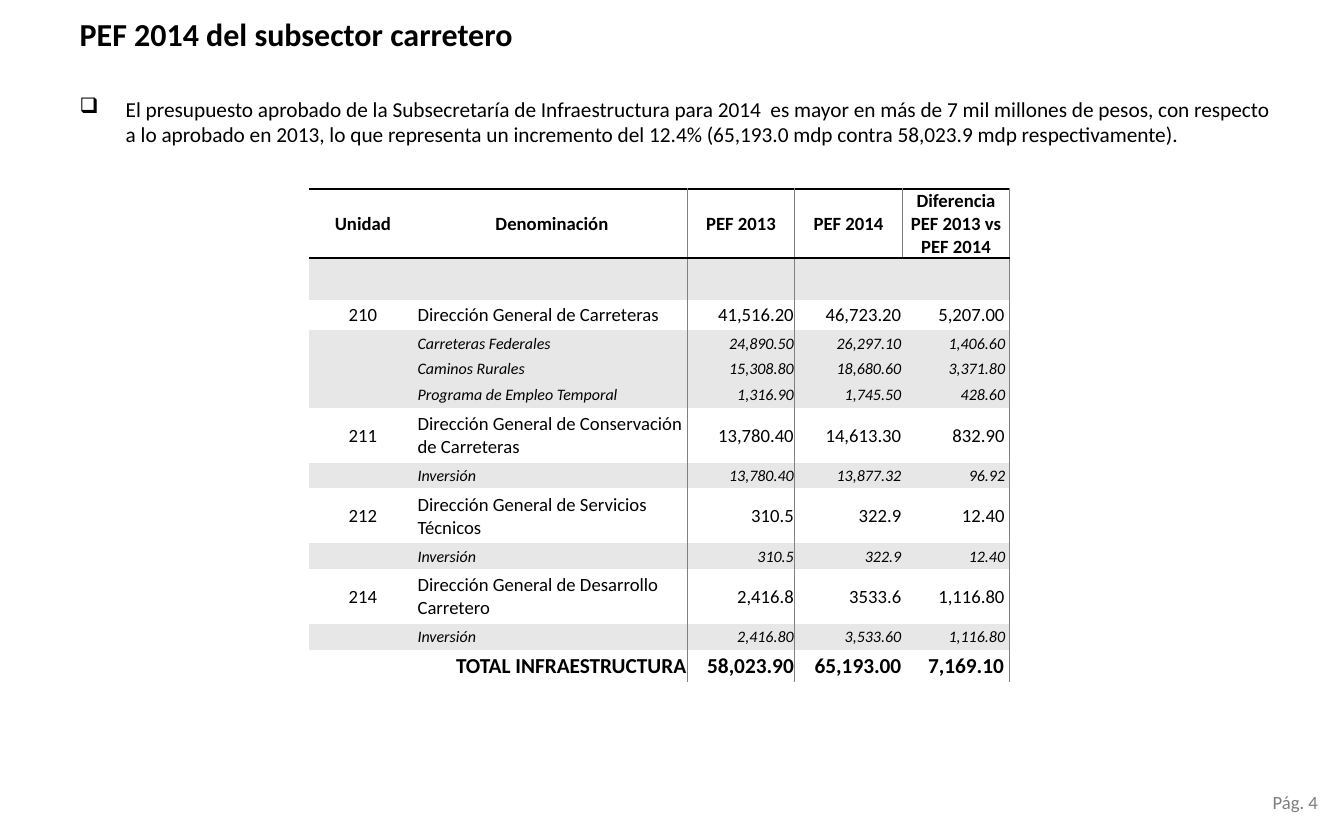
from lxml import etree
from pptx import Presentation
from pptx.dml.color import RGBColor
from pptx.enum import text as t
from pptx.oxml.ns import qn
from pptx.util import Inches, Pt

TITLE = "PEF 2014 del subsector carretero"
SUMMARY = (
    "El presupuesto aprobado de la Subsecretaría de Infraestructura para 2014  es mayor en más "
    "de 7 mil millones de pesos, con respecto a lo aprobado en 2013, lo que representa un "
    "incremento del 12.4% (65,193.0 mdp contra 58,023.9 mdp respectivamente)."
)
PAGE = "Pág. 4"
ROWS = [
    ("header", 0.61, ["Unidad", "Denominación", "PEF 2013", "PEF 2014", "Diferencia\nPEF 2013 vs PEF 2014"]),
    ("detail", 0.43, ["", "", "", "", ""]),
    ("unit", 0.32, ["210", "Dirección General de Carreteras", "41,516.20", "46,723.20", "5,207.00 "]),
    ("detail", 0.27, ["", "Carreteras Federales", "24,890.50", "26,297.10", "1,406.60 "]),
    ("detail", 0.27, ["", "Caminos Rurales", "15,308.80", "18,680.60", "3,371.80 "]),
    ("detail", 0.27, ["", "Programa de Empleo Temporal", "1,316.90", "1,745.50", "428.60 "]),
    ("unit", 0.57, ["211", "Dirección General de Conservación de Carreteras", "13,780.40", "14,613.30", "832.90 "]),
    ("detail", 0.27, ["", "Inversión", "13,780.40", "13,877.32", "96.92 "]),
    ("unit", 0.57, ["212", "Dirección General de Servicios Técnicos", "310.5", "322.9", "12.40 "]),
    ("detail", 0.27, ["", "Inversión", "310.5", "322.9", "12.40 "]),
    ("unit", 0.57, ["214", "Dirección General de Desarrollo Carretero", "2,416.8", "3533.6", "1,116.80 "]),
    ("detail", 0.27, ["", "Inversión", "2,416.80", "3,533.60", "1,116.80 "]),
    ("total", 0.34, ["TOTAL INFRAESTRUCTURA", "", "58,023.90", "65,193.00", "7,169.10 "]),
    ("closing", 0.29, ["", "", "", "", ""]),
]
COLUMNS = [1.12, 2.82, 1.12, 1.12, 1.12]
COLORS = {"text": "000000", "page": "7F7F7F", "band": "E7E7E7", "rule": "808080"}
FORMATS = {
    "header": {"size": 14, "bold": True},
    "unit": {"size": 14},
    "detail": {"size": 12, "italic": True},
    "total": {"size": 16, "bold": True},
    "closing": {"size": 12},
}
LEFT, CENTER, RIGHT = t.PP_ALIGN.LEFT, t.PP_ALIGN.CENTER, t.PP_ALIGN.RIGHT
ALIGNMENTS = [CENTER, LEFT, RIGHT, RIGHT, RIGHT]
NO_STYLE = "{2D5ABB26-0587-4C30-8999-92F81FD0307C}"


def write(frame, content, size, color="text", bold=False, italic=False, align=LEFT, bullet=None):
    for index, line in enumerate(content.split("\n")):
        paragraph = frame.paragraphs[0] if index == 0 else frame.add_paragraph()
        paragraph.alignment = align
        paragraph.space_before = Pt(0)
        if bullet:
            properties = paragraph._p.get_or_add_pPr()
            properties.set("marL", str(Inches(0.48)))
            properties.set("indent", str(-Inches(0.48)))
            etree.SubElement(properties, qn("a:buChar")).set("char", bullet)
        if not line:
            paragraph._p.get_or_add_endParaRPr().set("sz", str(size * 100))
            continue
        run = paragraph.add_run()
        run.text = line
        font = run.font
        font.name, font.size, font.bold, font.italic = "Calibri", Pt(size), bold, italic
        font.color.rgb = RGBColor.from_string(COLORS[color])


def place(shape, left, top, width, height, anchor=t.MSO_ANCHOR.TOP, wrap=True):
    shape.left, shape.top, shape.width, shape.height = map(Inches, (left, top, width, height))
    frame = shape.text_frame
    frame.word_wrap, frame.vertical_anchor = wrap, anchor
    frame.auto_size = t.MSO_AUTO_SIZE.NONE
    frame.margin_left = frame.margin_right = Inches(0.13)
    frame.margin_top = frame.margin_bottom = Inches(0.06)
    return frame


def set_borders(cell, borders):
    properties = cell._tc.get_or_add_tcPr()
    for index, side in enumerate(("lnL", "lnR", "lnT", "lnB")):
        line = etree.Element(qn(f"a:{side}"))
        if side in borders:
            color, width = borders[side]
            line.set("w", str(Pt(width)))
            fill = etree.SubElement(line, qn("a:solidFill"))
            etree.SubElement(fill, qn("a:srgbClr")).set("val", COLORS[color])
        else:
            etree.SubElement(line, qn("a:noFill"))
        properties.insert(index, line)


def cell_borders(kind, row, column):
    borders = {}
    if kind != "closing":
        if column > 1 and (kind == "header" or column < 4):
            borders["lnL"] = ("rule", 0.5)
        if column in (1, 2, 4) or (kind == "header" and column == 3):
            borders["lnR"] = ("rule", 0.5)
    if row < 2:
        borders["lnT"] = ("text", 1.5)
    if row == 0:
        borders["lnB"] = ("text", 1.5)
    return borders


def add_budget_table(slide):
    frame = slide.shapes.add_table(
        len(ROWS), len(COLUMNS), Inches(3.22), Inches(1.97),
        Inches(sum(COLUMNS)), Inches(sum(height for _, height, _ in ROWS)))
    table = frame.table
    table.first_row = table.horz_banding = False
    table._tbl.tblPr.find(qn("a:tableStyleId")).text = NO_STYLE
    for column, width in enumerate(COLUMNS):
        table.columns[column].width = Inches(width)
    for row, (kind, height, values) in enumerate(ROWS):
        table.rows[row].height = Inches(height)
        for column, value in enumerate(values):
            cell = table.cell(row, column)
            cell.vertical_anchor = t.MSO_ANCHOR.MIDDLE
            cell.margin_left = cell.margin_right = cell.margin_top = Inches(0.01)
            cell.margin_bottom = 0
            if kind == "detail":
                cell.fill.solid()
                cell.fill.fore_color.rgb = RGBColor.from_string(COLORS["band"])
            else:
                cell.fill.background()
            align = {"header": CENTER, "total": RIGHT}.get(kind, ALIGNMENTS[column])
            write(cell.text_frame, value, align=align, **FORMATS[kind])
            set_borders(cell, cell_borders(kind, row, column))
        if kind in ("total", "closing"):
            last = 1 if kind == "total" else 2
            table.cell(row, 0).merge(table.cell(row, last))
            if kind == "total":
                tail = table.cell(row, 0)._tc.tcPr.find(qn("a:lnR"))
                tail.getparent().remove(tail)
                set_total_rule(table.cell(row, 0))


def set_total_rule(cell):
    properties = cell._tc.tcPr
    for line in list(properties)[:3]:
        properties.remove(line)
    set_borders(cell, {"lnR": ("rule", 0.5)})


def main():
    presentation = Presentation()
    presentation.slide_width, presentation.slide_height = Inches(14), Inches(8.5)
    slide = presentation.slides.add_slide(presentation.slide_layouts[5])
    title = place(slide.shapes.title, 0.7, 0, 12.6, 0.71, t.MSO_ANCHOR.MIDDLE)
    write(title, TITLE, 24, bold=True)
    summary = place(slide.shapes.add_textbox(0, 0, 0, 0), 0.7, 0.94, 12.67, 0.8)
    write(summary, SUMMARY, 16, bullet="❑")
    add_budget_table(slide)
    page = place(slide.shapes.add_textbox(0, 0, 0, 0), 12.88, 8.18, 0.98, 0.36, wrap=False)
    write(page, PAGE, 14, color="page", align=RIGHT)
    presentation.save("out.pptx")


if __name__ == "__main__":
    main()
